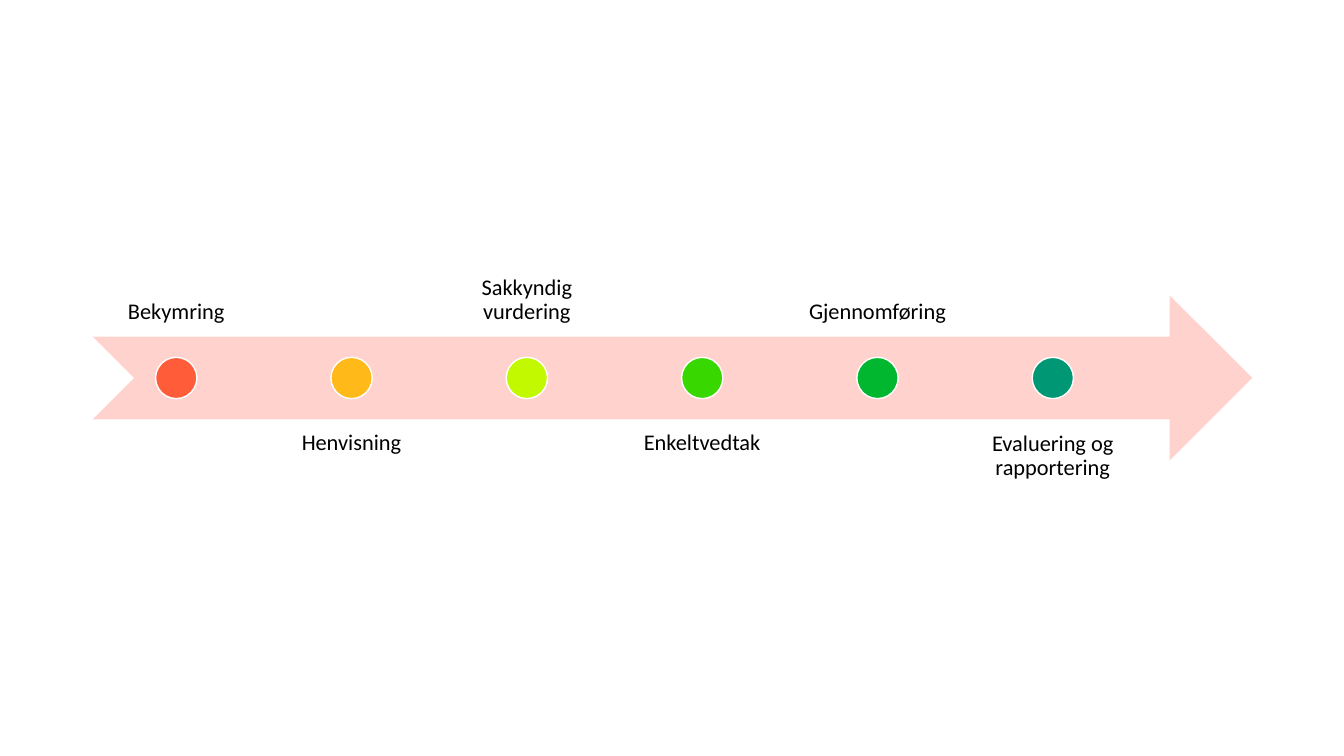
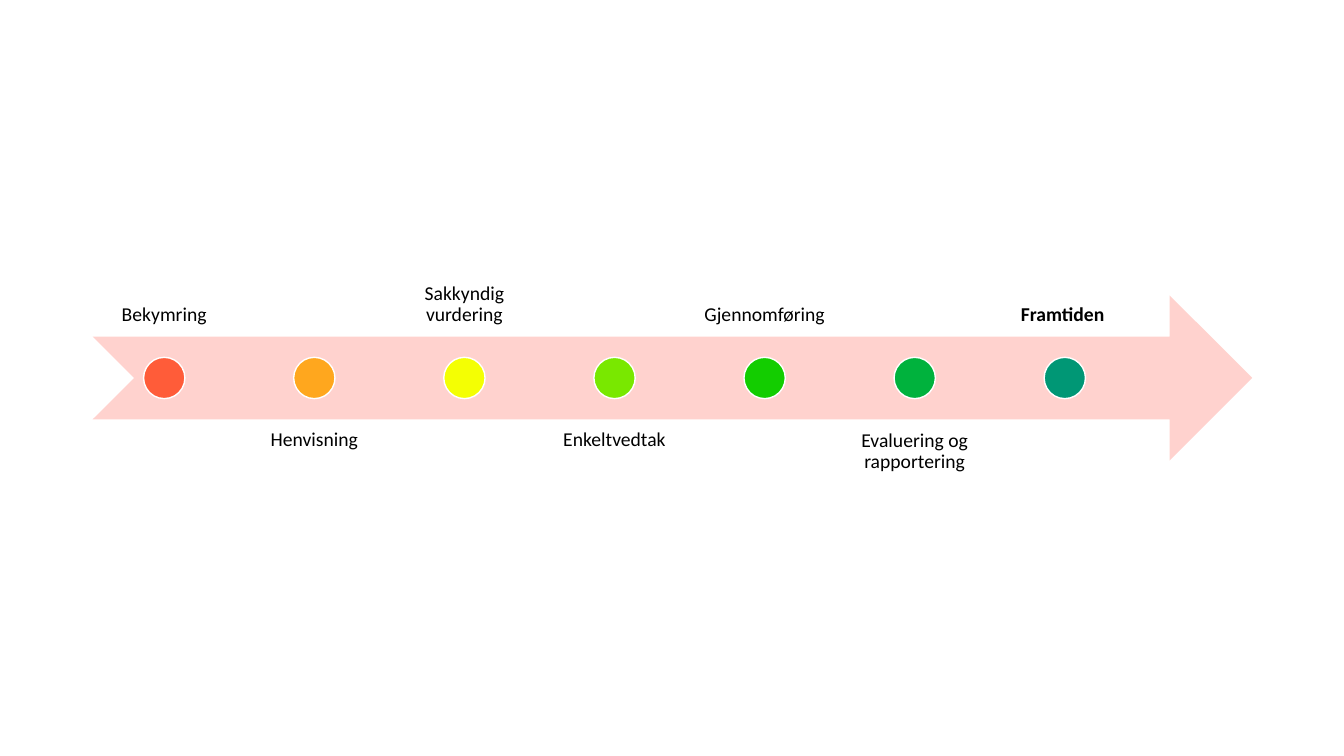
from pptx import Presentation
from pptx.dml.color import RGBColor
from pptx.enum.shapes import MSO_SHAPE
from pptx.enum.text import MSO_ANCHOR, PP_ALIGN
from pptx.util import Inches, Pt

COLORS = {
    "arrow": "FFD2CE", "outline": "FFFFFF", "text": "000000",
    "coral": "FF5C39", "amber": "FFB919", "orange": "FFA71E",
    "yellow": "F4FF03", "lime": "C2F800", "light green": "79E800",
    "green": "39D700", "pure green": "13CD00", "emerald": "00B72F",
    "deep emerald": "00B23D", "teal": "009775",
}
FONT = "Calibri"
SLIDE_WIDTH, SLIDE_HEIGHT = 13.33, 7.5
ROW = 0.41                       # dot diameter; the arrow is four rows high
ARROW_LEFT, ARROW_WIDTH = 0.92, 11.5
STEPS_SHARE = 0.9                # part of the arrow that carries the steps
GAP_SHARE = 0.05                 # gap between columns, as share of a column
MIDDLE = SLIDE_HEIGHT / 2

STEPS = ["Bekymring", "Henvisning", "Sakkyndig vurdering", "Enkeltvedtak",
         "Gjennomføring", "Evaluering og rapportering"]
FUTURE = "Framtiden "
PROCESS_COLORS = ["coral", "amber", "lime", "green", "emerald", "teal"]
FUTURE_COLORS = ["coral", "orange", "yellow", "light green", "pure green",
                 "deep emerald", "teal"]


class Timeline:
    """Deck style and the slide being drawn."""

    def __init__(self):
        self.deck = Presentation()
        self.deck.slide_width = Inches(SLIDE_WIDTH)
        self.deck.slide_height = Inches(SLIDE_HEIGHT)
        self.slide = None

    def new_slide(self):
        self.slide = self.deck.slides.add_slide(self.deck.slide_layouts[6])

    def color(self, name):
        return RGBColor.from_string(COLORS[name])

    def shape(self, kind, left, width, rows, fill):
        """Add a filled shape, centred on the middle of the slide's height."""
        height = rows * ROW
        shape = self.slide.shapes.add_shape(
            kind, Inches(left), Inches(MIDDLE - height / 2),
            Inches(width), Inches(height))
        shape.shadow.inherit = False
        shape.fill.solid()
        shape.fill.fore_color.rgb = self.color(fill)
        return shape

    def arrow(self):
        arrow = self.shape(MSO_SHAPE.NOTCHED_RIGHT_ARROW,
                           ARROW_LEFT, ARROW_WIDTH, 4, "arrow")
        arrow.line.fill.background()

    def dot(self, center, fill):
        dot = self.shape(MSO_SHAPE.OVAL, center - ROW / 2, ROW, 1, fill)
        dot.line.color.rgb = self.color("outline")
        dot.line.width = Pt(1)

    def label(self, text, left, width, above, size, bold):
        top = MIDDLE + (-5 if above else 1) * ROW
        box = self.slide.shapes.add_textbox(
            Inches(left), Inches(top), Inches(width), Inches(4 * ROW))
        frame = box.text_frame
        frame.word_wrap = True
        frame.vertical_anchor = MSO_ANCHOR.BOTTOM if above else MSO_ANCHOR.TOP
        inset = Pt(size * 0.56)
        frame.margin_left = frame.margin_right = inset
        frame.margin_top = frame.margin_bottom = inset
        paragraph = frame.paragraphs[0]
        paragraph.text = text
        paragraph.alignment = PP_ALIGN.CENTER
        paragraph.line_spacing = 0.9
        font = paragraph.font
        font.name, font.size, font.bold = FONT, Pt(size), bold
        font.color.rgb = self.color("text")

    def process(self, steps, colors, size):
        """Draw one slide with labels alternating above and below the arrow."""
        self.new_slide()
        self.arrow()
        count = len(steps)
        column = ARROW_WIDTH * STEPS_SHARE / (count + (count - 1) * GAP_SHARE)
        for index, (step, fill) in enumerate(zip(steps, colors)):
            left = ARROW_LEFT + index * column * (1 + GAP_SHARE)
            self.label(step, left, column, index % 2 == 0, size, step == FUTURE)
            self.dot(left + column / 2, fill)


def main():
    timeline = Timeline()
    timeline.process(STEPS, PROCESS_COLORS, 16)
    timeline.process(STEPS + [FUTURE], FUTURE_COLORS, 14)
    timeline.deck.save("out.pptx")


if __name__ == "__main__":
    main()
